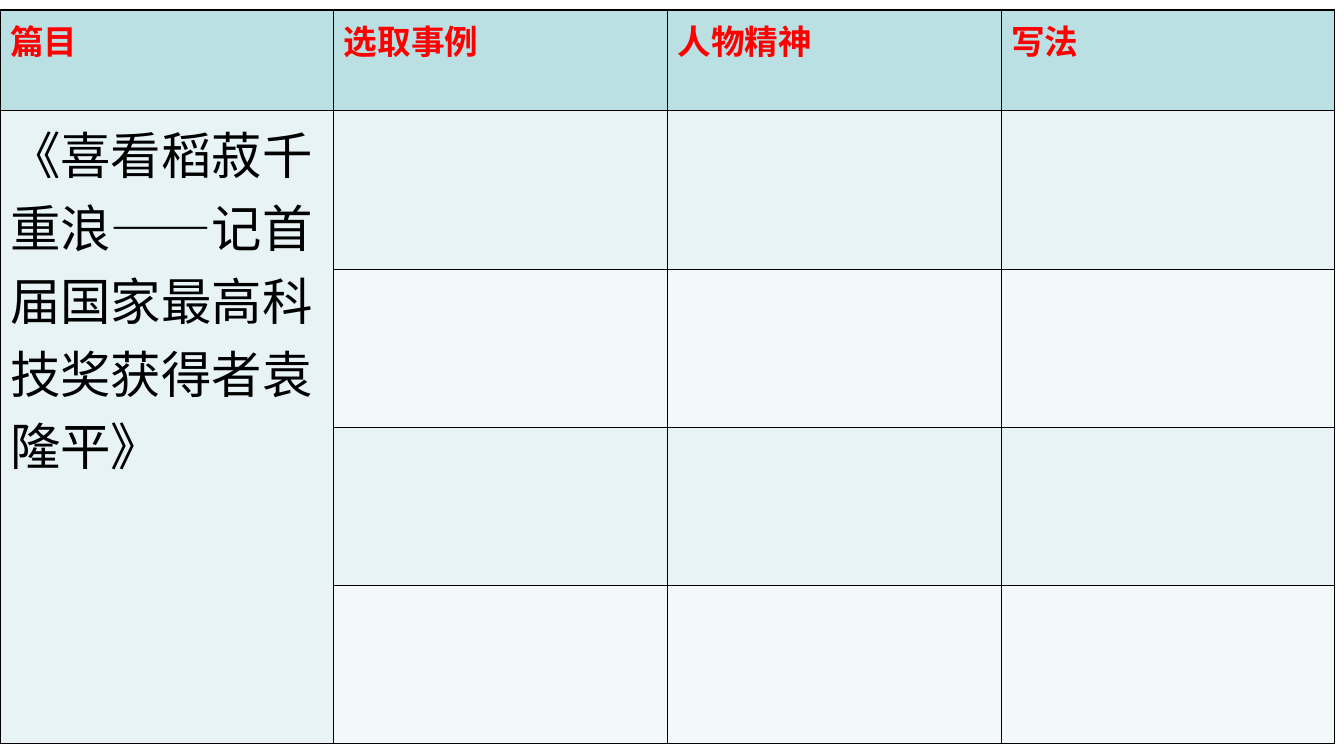
from lxml.etree import SubElement
from pptx import Presentation
from pptx.dml.color import RGBColor
from pptx.oxml.ns import qn
from pptx.util import Inches, Pt

COLORS = {
    "header": "BBE0E3",
    "band_dark": "E7F3F4",
    "band_light": "F3F9FA",
    "heading": "FF0000",
    "body": "000000",
    "border": "000000",
}
FONT = "Arial"
HEADINGS = ["篇目", "选取事例", "人物精神", "写法"]
ESSAY = "《喜看稻菽千重浪——记首届国家最高科技奖获得者袁隆平》"
COLUMN_WIDTH = 3.31
ROW_HEIGHTS = [1, 1.57, 1.57, 1.57, 1.57]


def row_color(row):
    """Return the fill colour name for a row of the table."""
    if row == 0:
        return "header"
    return "band_dark" if row % 2 else "band_light"


def fill_cell(cell, color):
    """Give a cell a black border on every side and a solid fill."""
    properties = cell._tc.get_or_add_tcPr()
    for side in ("a:lnL", "a:lnR", "a:lnT", "a:lnB"):
        line = SubElement(properties, qn(side), w=str(Pt(1)))
        solid = SubElement(line, qn("a:solidFill"))
        SubElement(solid, qn("a:srgbClr"), val=COLORS["border"])
    cell.fill.solid()
    cell.fill.fore_color.rgb = RGBColor.from_string(COLORS[color])


def write_cell(cell, text, size, color, bold):
    """Write text into a cell and format it."""
    cell.text_frame.text = text
    font = cell.text_frame.paragraphs[0].runs[0].font
    font.name = FONT
    font.size = Pt(size)
    font.bold = bold
    font.color.rgb = RGBColor.from_string(COLORS[color])


def add_grid(page):
    """Add the bordered, banded table and return it."""
    frame = page.shapes.add_table(
        len(ROW_HEIGHTS), len(HEADINGS), Inches(0), Inches(0.1),
        Inches(COLUMN_WIDTH * len(HEADINGS)), Inches(sum(ROW_HEIGHTS)))
    table = frame.table
    for column in table.columns:
        column.width = Inches(COLUMN_WIDTH)
    for index, height in enumerate(ROW_HEIGHTS):
        table.rows[index].height = Inches(height)
        for cell in table.rows[index].cells:
            fill_cell(cell, row_color(index))
    return table


def main():
    """Build the comparison table slide and save it."""
    deck = Presentation()
    deck.slide_width, deck.slide_height = Inches(13.33), Inches(7.5)
    page = deck.slides.add_slide(deck.slide_layouts[6])
    table = add_grid(page)
    for column, heading in enumerate(HEADINGS):
        write_cell(table.cell(0, column), heading, 24, "heading", True)
    essay_cell = table.cell(1, 0)
    essay_cell.merge(table.cell(len(ROW_HEIGHTS) - 1, 0))
    write_cell(essay_cell, ESSAY, 36, "body", False)
    deck.save("out.pptx")


if __name__ == "__main__":
    main()
